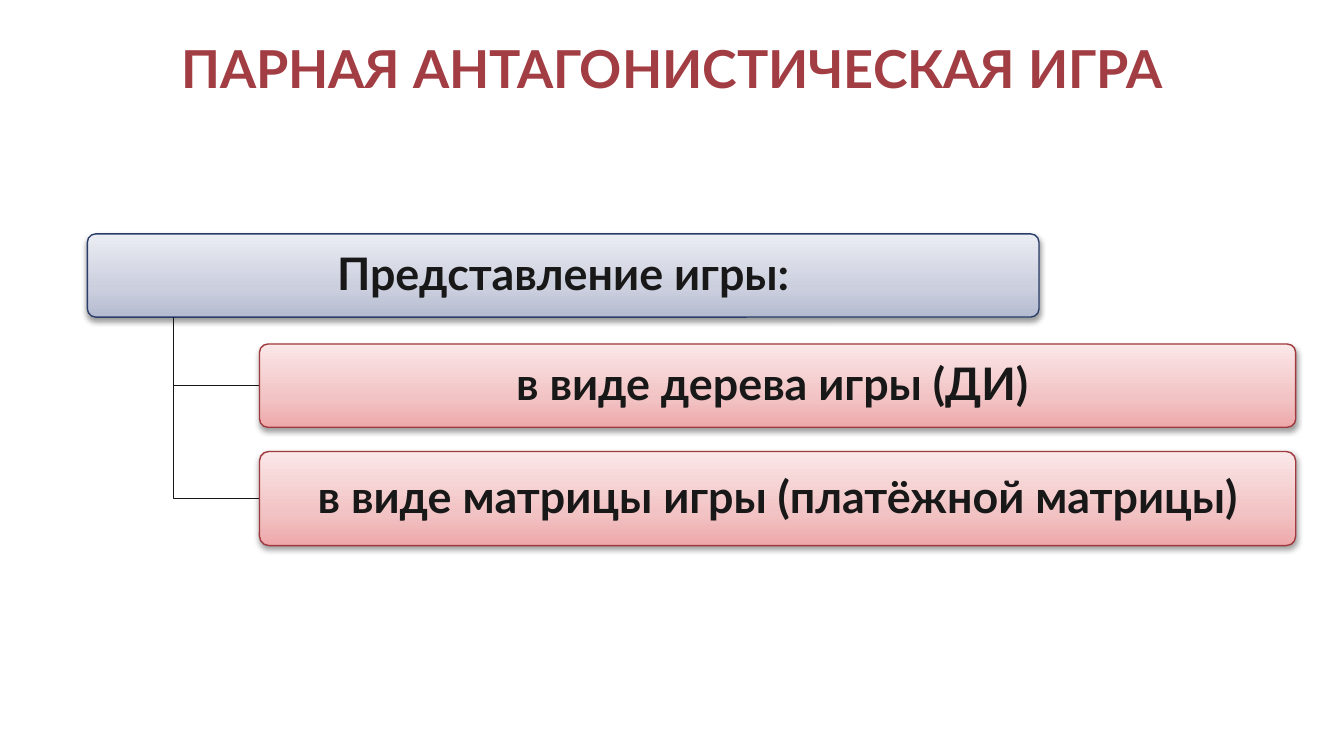
from dataclasses import dataclass

from lxml import etree
from pptx import Presentation
from pptx.dml.color import RGBColor
from pptx.enum.shapes import MSO_SHAPE
from pptx.enum.text import MSO_ANCHOR, PP_ALIGN
from pptx.oxml.ns import qn
from pptx.shapes.autoshape import Shape
from pptx.slide import Slide
from pptx.text.text import TextFrame
from pptx.util import Pt

ROUNDED = MSO_SHAPE.ROUNDED_RECTANGLE
MIDDLE = MSO_ANCHOR.MIDDLE
CENTER = PP_ALIGN.CENTER

FONT = "Lato"
COLOURS = {
    "title": "A23E43",
    "text": "181818",
    "branch": "171717",
    "blue_line": "293D69",
    "red_line": "A13A3F",
    "shadow": "000000",
}
GRADIENTS = {
    "blue": ((0, "B5BBD0"), (35, "CBCFDE"), (100, "EBEDF3")),
    "red": ((0, "EEA8AA"), (35, "F2C3C4"), (100, "FBE7E8")),
}
LINE_WIDTH = 0.75
TRUNK_OFFSET = 46.2


@dataclass
class Node:
    text: str
    left: float
    top: float
    width: float
    height: float
    palette: str


ROOT = Node("Представление игры:", 46.8, 125.3, 509.8, 44.6, "blue")
BRANCHES = [
    Node("в виде дерева игры (ДИ) ", 139, 184.3, 555.1, 44.6, "red"),
    Node("в виде матрицы игры (платёжной матрицы)", 139, 241.9, 555.1, 50.4, "red"),
]


def colour(name: str) -> RGBColor:
    return RGBColor.from_string(COLOURS[name])


def write_text(frame: TextFrame, text: str, size: float, colour_name: str) -> None:
    frame.word_wrap = True
    frame.vertical_anchor = MIDDLE
    frame.text = text
    para = frame.paragraphs[0]
    para.alignment = CENTER
    font = para.runs[0].font
    font.name, font.size, font.bold = FONT, Pt(size), True
    font.color.rgb = colour(colour_name)


def add_colour(parent: etree._Element, value: str) -> etree._Element:
    return etree.SubElement(parent, qn("a:srgbClr"), val=value)


def fill_gradient(shape: Shape, palette: str) -> None:
    """Fill from bottom to top with the three stops of the palette."""
    shape.fill.gradient()
    shape.fill.gradient_angle = 90
    stops = shape.element.spPr.find(".//" + qn("a:gsLst"))
    for stop in list(stops):
        stops.remove(stop)
    for position, value in GRADIENTS[palette]:
        add_colour(etree.SubElement(stops, qn("a:gs"), pos=str(position * 1000)), value)


def add_shadow(shape: Shape) -> None:
    shape.shadow.inherit = False
    effects = shape.element.spPr.find(qn("a:effectLst"))
    shadow = etree.SubElement(
        effects, qn("a:outerShdw"), blurRad=str(Pt(3.1)), dist=str(Pt(1.6)),
        dir="5400000", rotWithShape="0",
    )
    etree.SubElement(add_colour(shadow, COLOURS["shadow"]), qn("a:alpha"), val="38000")


def add_node(page: Slide, node: Node) -> None:
    box = page.shapes.add_shape(
        ROUNDED, Pt(node.left), Pt(node.top), Pt(node.width), Pt(node.height)
    )
    box.adjustments[0] = 0.1
    fill_gradient(box, node.palette)
    box.line.color.rgb = colour(node.palette + "_line")
    box.line.width = Pt(LINE_WIDTH)
    add_shadow(box)
    frame = box.text_frame
    frame.margin_left = frame.margin_right = Pt(3.6)
    frame.margin_top = frame.margin_bottom = Pt(2.4)
    write_text(frame, node.text, 24, "text")
    frame.paragraphs[0].line_spacing = 0.9


def add_elbow(page: Slide, parent: Node, child: Node) -> None:
    """Run down from the parent, then right to the middle of the child's side."""
    trunk = Pt(parent.left + TRUNK_OFFSET)
    middle = Pt(child.top + child.height / 2)
    builder = page.shapes.build_freeform(trunk, Pt(parent.top + parent.height))
    builder.add_line_segments([(trunk, middle), (Pt(child.left), middle)], close=False)
    elbow = builder.convert_to_shape()
    elbow.fill.background()
    elbow.line.color.rgb = colour("branch")
    elbow.line.width = Pt(LINE_WIDTH)
    elbow.shadow.inherit = False


def main() -> None:
    deck = Presentation()
    deck.slide_width, deck.slide_height = Pt(720), Pt(405)
    page = deck.slides.add_slide(deck.slide_layouts[6])
    title = page.shapes.add_textbox(Pt(36), Pt(10.8), Pt(648), Pt(50.4))
    write_text(title.text_frame, "ПАРНАЯ АНТАГОНИСТИЧЕСКАЯ ИГРА", 28, "title")
    add_node(page, ROOT)
    for branch in BRANCHES:
        add_elbow(page, ROOT, branch)
        add_node(page, branch)
    deck.save("out.pptx")


if __name__ == "__main__":
    main()
